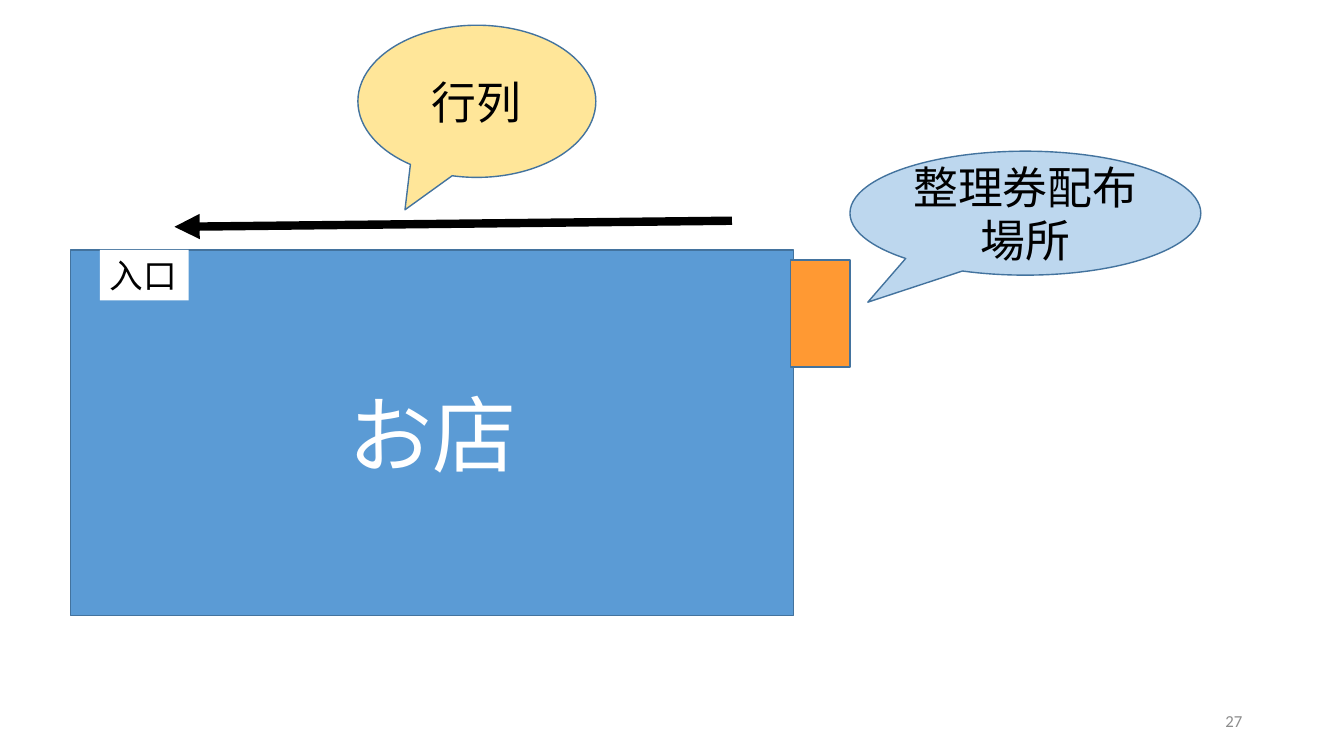
from lxml import etree
from pptx import Presentation
from pptx.dml.color import RGBColor
from pptx.enum.shapes import MSO_CONNECTOR, MSO_SHAPE
from pptx.enum.text import MSO_ANCHOR, PP_ALIGN
from pptx.oxml.ns import qn
from pptx.util import Inches, Pt

RECT = MSO_SHAPE.RECTANGLE
CALLOUT = MSO_SHAPE.OVAL_CALLOUT
STRAIGHT = MSO_CONNECTOR.STRAIGHT
TOP, MIDDLE = MSO_ANCHOR.TOP, MSO_ANCHOR.MIDDLE
LEFT, CENTER, RIGHT = PP_ALIGN.LEFT, PP_ALIGN.CENTER, PP_ALIGN.RIGHT

FONT = "Calibri"
BLACK, WHITE, GREY = "000000", "FFFFFF", "8C8C8C"
BLUE, OUTLINE, ORANGE = "5B9BD5", "43739E", "FF9933"
YELLOW, PALE_BLUE = "FFE699", "BDD7EE"


def rgb(color):
    return RGBColor.from_string(color)


def write(sp, text, size, color=BLACK, align=CENTER, anchor=MIDDLE):
    tf = sp.text_frame
    tf.word_wrap = True
    tf.vertical_anchor = anchor
    p = tf.paragraphs[0]
    p.alignment = align
    r = p.add_run()
    r.text = text
    r.font.name = FONT
    r.font.size = Pt(size)
    r.font.color.rgb = rgb(color)


def add_box(s, kind, box, fill):
    sp = s.shapes.add_shape(kind, *map(Inches, box))
    sp.shadow.inherit = False
    sp.fill.solid()
    sp.fill.fore_color.rgb = rgb(fill)
    sp.line.color.rgb = rgb(OUTLINE)
    sp.line.width = Pt(1)
    return sp


def add_callout(s, box, fill, tip, text):
    sp = add_box(s, CALLOUT, box, fill)
    sp.adjustments[0], sp.adjustments[1] = tip
    write(sp, text, 32)


def add_label(s, box, text, size, color, align, anchor):
    sp = s.shapes.add_textbox(*map(Inches, box))
    write(sp, text, size, color, align, anchor)
    return sp


def add_arrow(s, start, end, width):
    line = s.shapes.add_connector(STRAIGHT, *map(Inches, start + end))
    line.line.color.rgb = rgb(BLACK)
    line.line.width = Pt(width)
    ln = line.line._get_or_add_ln()
    etree.SubElement(ln, qn("a:tailEnd"), type="triangle")
    etree.SubElement(line._element.spPr, qn("a:effectLst"))


def main():
    prs = Presentation()
    prs.slide_width, prs.slide_height = Inches(13.33), Inches(7.5)
    s = prs.slides.add_slide(prs.slide_layouts[6])

    # Slide number
    add_label(s, (9.42, 6.95, 3, 0.4), "27", 12, GREY, RIGHT, MIDDLE)

    # Shop and the queue along its wall
    shop = add_box(s, RECT, (0.7, 2.48, 7.17, 3.63), BLUE)
    write(shop, "お店", 60, WHITE)
    add_arrow(s, (7.26, 2.19), (1.73, 2.25), 6)
    add_callout(s, (3.55, 0.25, 2.36, 1.51), YELLOW, (-0.302, 0.713), "行列")

    # Ticket desk
    add_box(s, RECT, (7.84, 2.58, 0.59, 1.06), ORANGE)
    add_callout(s, (8.43, 1.5, 3.48, 1.23), PALE_BLUE, (-0.449, 0.718),
                "整理券配布場所")

    # Entrance
    entrance = add_label(s, (0.99, 2.48, 0.88, 0.5), "入口", 24, BLACK, LEFT, TOP)
    entrance.fill.solid()
    entrance.fill.fore_color.rgb = rgb(WHITE)

    prs.save("out.pptx")


if __name__ == "__main__":
    main()
